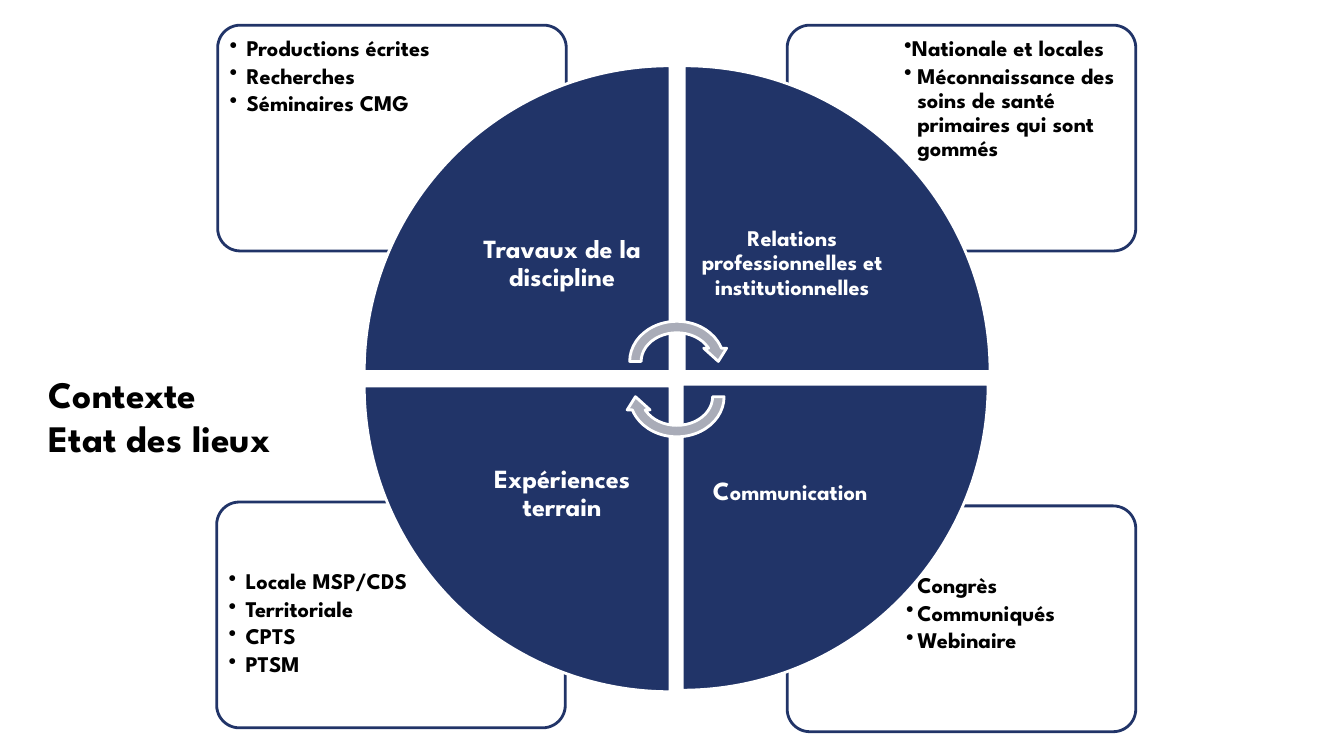
from dataclasses import dataclass

from lxml.etree import SubElement
from pptx import Presentation
from pptx.dml.color import RGBColor
from pptx.enum.shapes import MSO_SHAPE
from pptx.enum.text import MSO_ANCHOR, MSO_AUTO_SIZE, PP_ALIGN
from pptx.oxml.ns import qn
from pptx.util import Pt


@dataclass(frozen=True)
class Theme:
    font: str = "League Spartan"
    navy: RGBColor = RGBColor(0x21, 0x34, 0x68)
    grey: RGBColor = RGBColor(0xA9, 0xAC, 0xB8)
    white: RGBColor = RGBColor(0xFF, 0xFF, 0xFF)
    black: RGBColor = RGBColor(0, 0, 0)
    title: float = 26.7
    label: float = 18.7
    body: float = 16
    outline: float = 2


@dataclass(frozen=True)
class Quadrant:
    box: tuple
    note_offset: tuple
    bullets: list
    wedge: tuple
    rotation: int
    label: list
    label_inset: float


THEME = Theme()
BOX_SIZE = (249, 161.3)
NOTE_SIZE = (167, 113.8)
WEDGE_SIDE = 218.5
LABEL_SIDE = 154.3
ARROW_SIZE = (75.6, 65.5)
ARROWS = [(445.7, 225.4, 0), (445.7, 250.6, 180)]
WIDE, NARROW, FLUSH, TIGHT = (12, -12), (9.4, -8), (0, -8), (9.4, -9.4)

QUADRANTS = [
    Quadrant((562.3, 361.4), (78.5, 43.9),
             [("Congrès", NARROW), ("Communiqués", NARROW), ("Webinaire", NARROW)],
             (487.3, 274.5), 180,
             [("C", THEME.label), ("ommunication", THEME.body)], 10.7),
    Quadrant((154.8, 358.6), (3.6, 43.9),
             [("Locale MSP/CDS", WIDE), ("Territoriale", WIDE), ("CPTS", WIDE), ("PTSM", WIDE)],
             (260.2, 275.6), 270,
             [("Expériences terrain", THEME.label)], 10.7),
    Quadrant((562.3, 18), (78.5, 3.6),
             [("Nationale et locales", FLUSH),
              ("Méconnaissance des soins de santé primaires qui sont gommés", TIGHT)],
             (488.7, 47), 90,
             [("Relations professionnelles et institutionnelles", THEME.body)], 8.8),
    Quadrant((155.5, 18), (3.6, 3.6),
             [("Productions écrites", WIDE), ("Recherches", WIDE), ("Séminaires CMG", WIDE)],
             (260.2, 47), 0,
             [("Travaux de la discipline", THEME.label)], 10.7),
]


def set_font(font, size, color):
    font.name = THEME.font
    font.bold = True
    font.size = Pt(size)
    font.color.rgb = color


def set_insets(frame, horizontal, vertical):
    frame.margin_left = frame.margin_right = Pt(horizontal)
    frame.margin_top = frame.margin_bottom = Pt(vertical)


def add_preset(slide, kind, position, size, fill, line, rotation=0):
    shape = slide.shapes.add_shape(kind, *map(Pt, position + size))
    shape.shadow.inherit = False
    shape.fill.solid()
    shape.fill.fore_color.rgb = fill
    shape.line.color.rgb = line
    shape.line.width = Pt(THEME.outline)
    shape.rotation = rotation
    return shape


def add_text(slide, position, size, inset):
    frame = slide.shapes.add_textbox(*map(Pt, position + size)).text_frame
    frame.word_wrap = True
    set_insets(frame, inset, inset)
    return frame


def add_bullet(para, indent):
    properties = para._p.get_or_add_pPr()
    properties.set("marL", str(Pt(indent[0])))
    properties.set("indent", str(Pt(indent[1])))
    color = SubElement(properties, qn("a:buClr"))
    SubElement(color, qn("a:srgbClr"), val=str(THEME.black))
    SubElement(properties, qn("a:buChar"), char="•")


def add_box(slide, quadrant):
    box = add_preset(slide, MSO_SHAPE.ROUNDED_RECTANGLE, quadrant.box, BOX_SIZE,
                     THEME.white, THEME.navy)
    box.adjustments[0] = 0.1
    color = box.fill._xPr.find(qn("a:solidFill")).find(qn("a:srgbClr"))
    SubElement(color, qn("a:alpha"), val="90000")

    position = tuple(start + offset for start, offset in zip(quadrant.box, quadrant.note_offset))
    frame = add_text(slide, position, NOTE_SIZE, 5)
    for index, (text, indent) in enumerate(quadrant.bullets):
        para = frame.add_paragraph() if index else frame.paragraphs[0]
        para.text = text
        para.level = 1
        para.line_spacing = 0.9
        para.space_before = Pt(2.4 if index else 0)
        add_bullet(para, indent)
        set_font(para.font, THEME.body, THEME.black)


def add_wedge(slide, quadrant):
    add_preset(slide, MSO_SHAPE.PIE_WEDGE, quadrant.wedge, (WEDGE_SIDE, WEDGE_SIDE),
               THEME.navy, THEME.white, quadrant.rotation)
    left, top = quadrant.wedge
    shift = WEDGE_SIDE - LABEL_SIDE
    if quadrant.rotation in (0, 270):
        left += shift
    if quadrant.rotation in (0, 90):
        top += shift
    frame = add_text(slide, (left, top), (LABEL_SIDE, LABEL_SIDE), quadrant.label_inset)
    frame.vertical_anchor = MSO_ANCHOR.MIDDLE
    para = frame.paragraphs[0]
    para.alignment = PP_ALIGN.CENTER
    para.line_spacing = 0.9
    set_font(para.font, quadrant.label[0][1], THEME.white)
    for text, size in quadrant.label:
        span = para.add_run()
        span.text = text
        if len(quadrant.label) > 1:
            span.font.size = Pt(size)


def set_title(slide, lines):
    title = slide.shapes.title
    title.left, title.top, title.width, title.height = map(Pt, (25.2, 260, 200.9, 74.2))
    frame = title.text_frame
    frame.word_wrap = True
    frame.auto_size = MSO_AUTO_SIZE.SHAPE_TO_FIT_TEXT
    frame.vertical_anchor = MSO_ANCHOR.TOP
    set_insets(frame, 9.6, 4.8)
    frame.text = "\n".join(lines)
    for para in frame.paragraphs:
        para.alignment = PP_ALIGN.LEFT
        set_font(para.font, THEME.title, THEME.black)


def main():
    deck = Presentation()
    deck.slide_width, deck.slide_height = Pt(960), Pt(540)
    page = deck.slides.add_slide(deck.slide_layouts[5])
    set_title(page, ["Contexte", "Etat des lieux"])
    for quadrant in QUADRANTS:
        add_box(page, quadrant)
    for quadrant in reversed(QUADRANTS):
        add_wedge(page, quadrant)
    for left, top, rotation in ARROWS:
        add_preset(page, MSO_SHAPE.CIRCULAR_ARROW, (left, top), ARROW_SIZE,
                   THEME.grey, THEME.white, rotation)
    deck.save("out.pptx")


if __name__ == "__main__":
    main()
